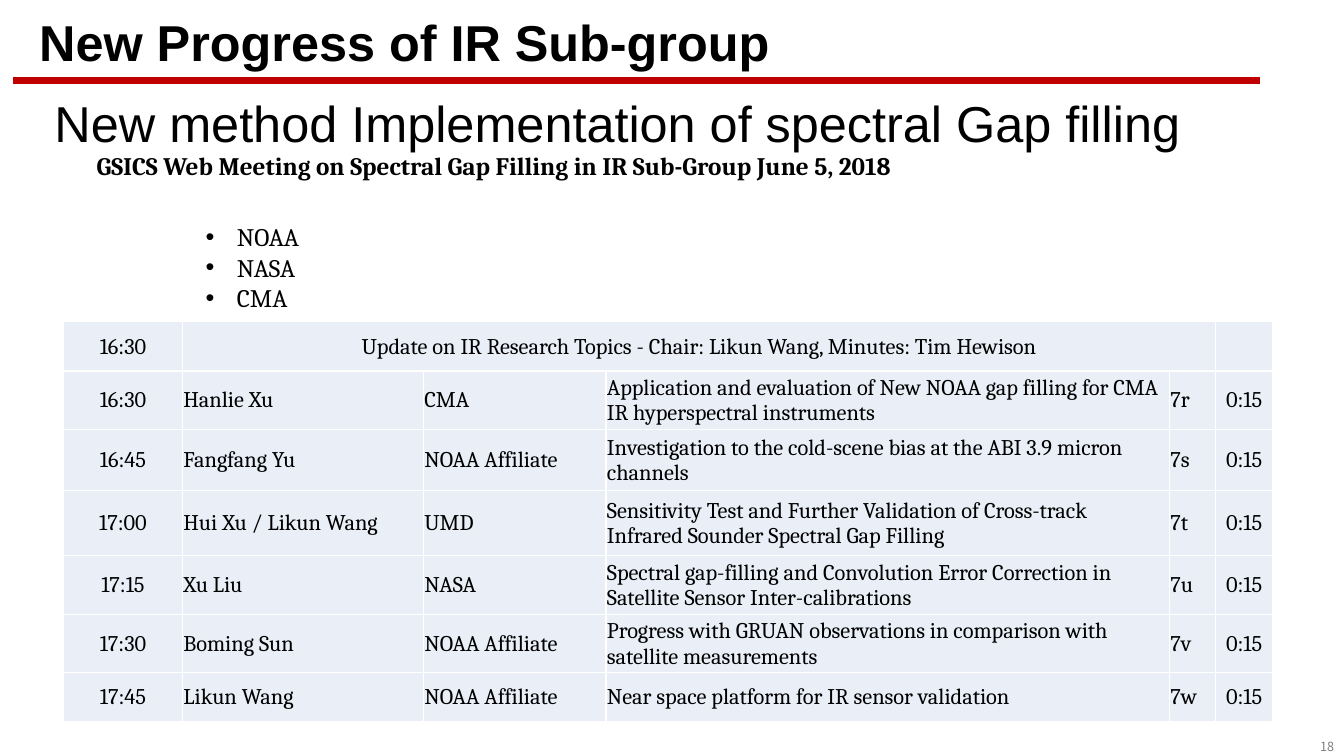
from lxml import etree
from pptx import Presentation
from pptx.dml.color import RGBColor
from pptx.enum.shapes import MSO_CONNECTOR
from pptx.enum.text import MSO_ANCHOR, PP_ALIGN
from pptx.oxml.ns import qn
from pptx.util import Inches, Pt

LEFT, CENTER, RIGHT = PP_ALIGN.LEFT, PP_ALIGN.CENTER, PP_ALIGN.RIGHT
TOP, MIDDLE = MSO_ANCHOR.TOP, MSO_ANCHOR.MIDDLE
STRAIGHT = MSO_CONNECTOR.STRAIGHT

COLS = [1.18, 2.39, 1.81, 5.59, 0.46, 0.56]
ROWS = [0.49, 0.58, 0.61, 0.64, 0.59, 0.57, 0.49]
SESSION = "Update on IR Research Topics - Chair: Likun Wang, Minutes: Tim Hewison"
TALKS = [
    ("16:30", "Hanlie Xu", "CMA",
     "Application and evaluation of New NOAA gap filling for CMA IR hyperspectral instruments", "7r"),
    ("16:45", "Fangfang Yu", "NOAA Affiliate",
     "Investigation to the cold-scene bias at the ABI 3.9 micron channels", "7s"),
    ("17:00", "Hui Xu / Likun Wang", "UMD",
     "Sensitivity Test and Further Validation of Cross-track Infrared Sounder Spectral Gap Filling", "7t"),
    ("17:15", "Xu Liu", "NASA",
     "Spectral gap-filling and Convolution Error Correction in Satellite Sensor Inter-calibrations", "7u"),
    ("17:30", "Boming Sun", "NOAA Affiliate",
     "Progress with GRUAN observations in comparison with satellite measurements", "7v"),
    ("17:45", "Likun Wang", "NOAA Affiliate",
     "Near space platform for IR sensor validation", "7w"),
]


def color(code):
    return RGBColor.from_string(code)


def place(shape, left, top, width, height):
    shape.left, shape.top = Inches(left), Inches(top)
    shape.width, shape.height = Inches(width), Inches(height)


def add_bullet(para):
    props = para._p.get_or_add_pPr()
    props.set("marL", str(Inches(0.31)))
    props.set("indent", str(-Inches(0.31)))
    etree.SubElement(props, qn("a:buFont")).set("typeface", "Arial")
    etree.SubElement(props, qn("a:buChar")).set("char", "•")


def write(frame, text, size=18, face="Cambria", ink="000000", bold=False,
          align=LEFT, anchor=TOP, line=1.0, bullet=False):
    """Fill a text frame, one paragraph for each line of text."""
    frame.word_wrap = True
    frame.vertical_anchor = anchor
    for i, words in enumerate(text.split("\n")):
        para = frame.paragraphs[0] if i == 0 else frame.add_paragraph()
        para.alignment = align
        para.line_spacing = line
        para.space_before = Pt(0)
        if bullet:
            add_bullet(para)
        run = para.add_run()
        run.text = words
        font = run.font
        font.name, font.size, font.bold = face, Pt(size), bold
        font.color.rgb = color(ink)


def add_text(slide, box, text, **style):
    shape = slide.shapes.add_textbox(*map(Inches, box))
    write(shape.text_frame, text, **style)


def add_rule(slide, left, right, y, ink, width):
    rule = slide.shapes.add_connector(
        STRAIGHT, Inches(left), Inches(y), Inches(right), Inches(y))
    rule.line.color.rgb = color(ink)
    rule.line.width = Pt(width)
    etree.SubElement(rule._element.spPr, qn("a:effectLst"))


def style_cell(cell, fill, edge):
    cell.margin_left = cell.margin_right = cell.margin_top = Inches(0.01)
    cell.margin_bottom = 0
    props = cell._tc.get_or_add_tcPr()
    for side in ("lnL", "lnR", "lnT", "lnB"):
        line = etree.SubElement(props, qn(f"a:{side}"), w=str(Pt(1)))
        paint = etree.SubElement(line, qn("a:solidFill"))
        etree.SubElement(paint, qn("a:srgbClr")).set("val", edge)
    cell.fill.solid()
    cell.fill.fore_color.rgb = color(fill)


def add_agenda(slide, left, top):
    table = slide.shapes.add_table(
        len(ROWS), len(COLS), Inches(left), Inches(top),
        Inches(sum(COLS)), Inches(sum(ROWS))).table
    for col, width in zip(table.columns, COLS):
        col.width = Inches(width)
    for row, height in zip(table.rows, ROWS):
        row.height = Inches(height)
    lines = [("16:30", SESSION, "", "", "", "")]
    lines += [talk + ("0:15",) for talk in TALKS]
    for r, words in enumerate(lines):
        for c, text in enumerate(words):
            cell = table.cell(r, c)
            style_cell(cell, "EAEFF7", "FFFFFF")
            cell.vertical_anchor = MIDDLE
            if text:
                mid = r == 0 or c in (0, len(COLS) - 1)
                write(cell.text_frame, text, size=16, anchor=MIDDLE,
                      align=CENTER if mid else LEFT)
    table.cell(0, 1).merge(table.cell(0, 4))


def main():
    deck = Presentation()
    deck.slide_width, deck.slide_height = Inches(13.33), Inches(7.5)
    slide = deck.slides.add_slide(deck.slide_layouts[1])
    title, body = slide.shapes.title, slide.placeholders[1]
    heading = {"size": 36, "face": "Arial", "anchor": MIDDLE, "line": 0.9}

    add_rule(slide, 0.13, 12.5, 0.8, "C00000", 4.5)
    add_text(slide, (12.19, 7.28, 1.14, 0.25), "18", size=9,
             face="Noto Sans CJK KR", ink="808080", align=RIGHT)
    place(title, 0.44, 0.95, 11.5, 0.6)
    write(title.text_frame, "New method Implementation of spectral Gap filling",
          **heading)
    add_agenda(slide, 0.63, 3.19)
    add_text(slide, (0.29, 0.15, 11.5, 0.6), "New Progress of IR Sub-group",
             bold=True, **heading)
    place(body, 1.94, 2.15, 1.32, 1.01)
    write(body.text_frame, "NOAA\nNASA\nCMA", bullet=True)
    add_text(slide, (0.86, 1.44, 9.94, 0.4),
             "GSICS Web Meeting on Spectral Gap Filling in IR Sub-Group June 5, 2018",
             bold=True)
    deck.save("out.pptx")


if __name__ == "__main__":
    main()
